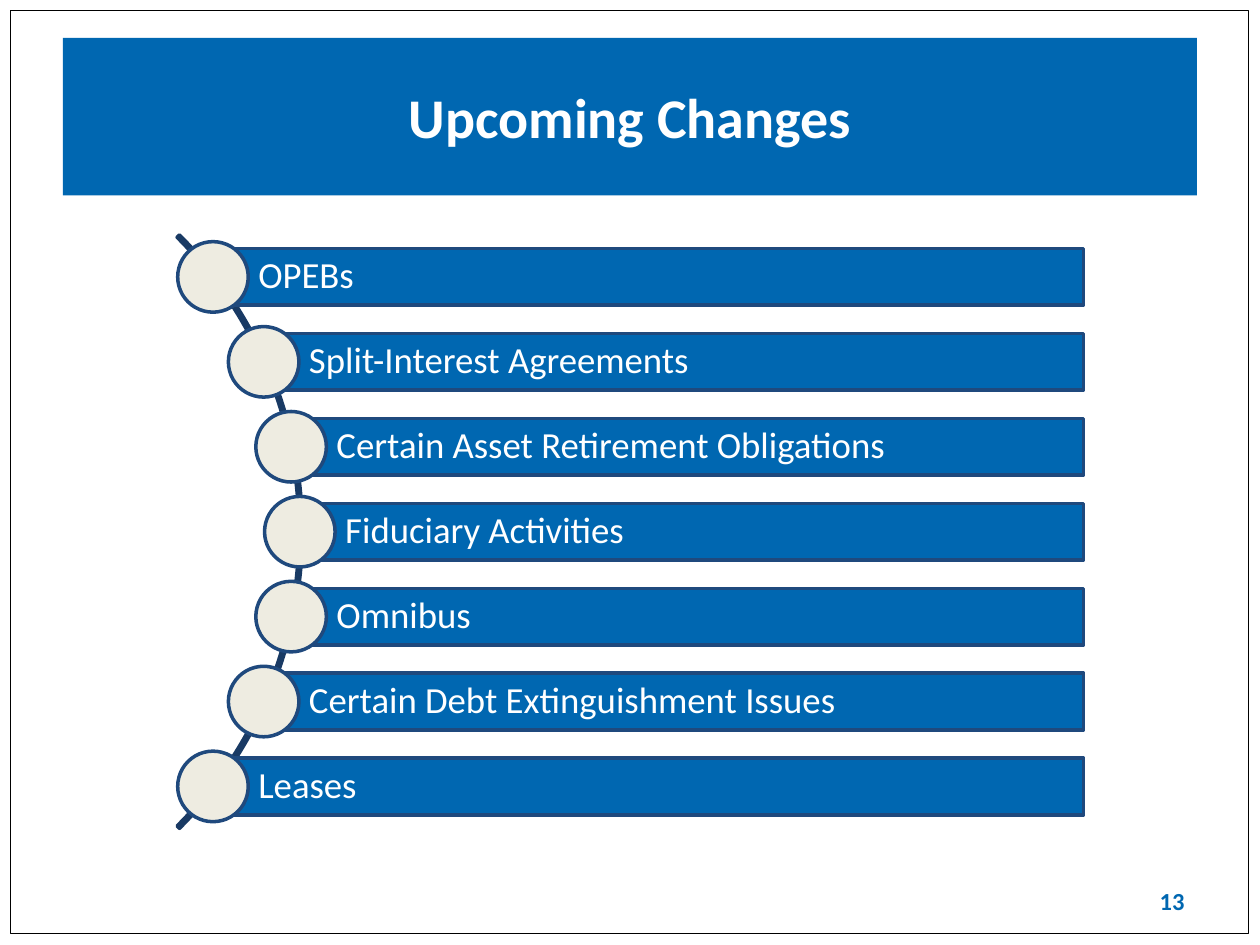
import math

from pptx import Presentation
from pptx.dml.color import RGBColor
from pptx.enum import shapes, text
from pptx.util import Inches, Pt

COLORS = {
    "blue": "0067B1",
    "navy": "1F497D",
    "arc": "193A64",
    "cream": "EEECE1",
    "white": "FFFFFF",
    "black": "000000",
}
TOPICS = [
    "OPEBs",
    "Split-Interest Agreements",
    "Certain Asset Retirement Obligations",
    "Fiduciary Activities",
    "Omnibus",
    "Certain Debt Extinguishment Issues",
    "Leases",
]

prs = Presentation()
prs.slide_width, prs.slide_height = Inches(10), Inches(7.5)
slide = prs.slides.add_slide(prs.slide_layouts[6])


def add_shape(kind, left, top, width, height, fill=None, line=None, weight=2):
    shape = slide.shapes.add_shape(
        kind, Inches(left), Inches(top), Inches(width), Inches(height))
    shape.shadow.inherit = False
    if fill:
        shape.fill.solid()
        shape.fill.fore_color.rgb = RGBColor.from_string(COLORS[fill])
    else:
        shape.fill.background()
    if line:
        shape.line.color.rgb = RGBColor.from_string(COLORS[line])
        shape.line.width = Pt(weight)
    else:
        shape.line.fill.background()
    return shape


def write(shape, words, size, color, align, bold=False):
    frame = shape.text_frame
    frame.word_wrap = True
    frame.vertical_anchor = text.MSO_ANCHOR.MIDDLE
    frame.text = words
    paragraph = frame.paragraphs[0]
    paragraph.alignment = align
    font = paragraph.runs[0].font
    font.name, font.size, font.bold = "Calibri", Pt(size), bold
    font.color.rgb = RGBColor.from_string(COLORS[color])


KIND = shapes.MSO_SHAPE
ALIGN = text.PP_ALIGN

# Page frame and title
add_shape(KIND.RECTANGLE, 0.08, 0.08, 9.83, 7.33, line="black", weight=0.5)
title = add_shape(KIND.RECTANGLE, 0.5, 0.3, 9, 1.25, fill="blue")
write(title, "Upcoming Changes", 32, "white", ALIGN.CENTER, bold=True)

# Arc that the topics follow
center_x, center_y, radius = -0.93, 4.22, 3.33
arc = add_shape(KIND.BLOCK_ARC, center_x - radius, center_y - radius,
                2 * radius, 2 * radius, line="arc")
arc.adjustments[0] = 189  # 315 degrees
arc.adjustments[1] = 27  # 45 degrees
arc.adjustments[2] = 0.004

# One bar and one circle per topic, centred on the arc
pitch, bar_height, circle_size, bar_right = 0.674, 0.45, 0.56, 8.6
node_radius = 3.31
for row, topic in enumerate(TOPICS):
    offset = (row - len(TOPICS) // 2) * pitch
    x = center_x + math.sqrt(node_radius ** 2 - offset ** 2)
    y = center_y + offset
    bar = add_shape(KIND.RECTANGLE, x, y - bar_height / 2, bar_right - x,
                    bar_height, fill="blue", line="navy")
    write(bar, topic, 21, "white", ALIGN.LEFT)
    frame = bar.text_frame
    frame.margin_left = Inches(0.36)
    frame.margin_top = frame.margin_right = frame.margin_bottom = Inches(0.06)
    frame.paragraphs[0].line_spacing = 0.9
    add_shape(KIND.OVAL, x - circle_size / 2, y - circle_size / 2,
              circle_size, circle_size, fill="cream", line="navy")

page_number = slide.shapes.add_textbox(
    Inches(7.17), Inches(6.95), Inches(2.33), Inches(0.4))
write(page_number, "13", 14, "blue", ALIGN.RIGHT, bold=True)

prs.save("out.pptx")
